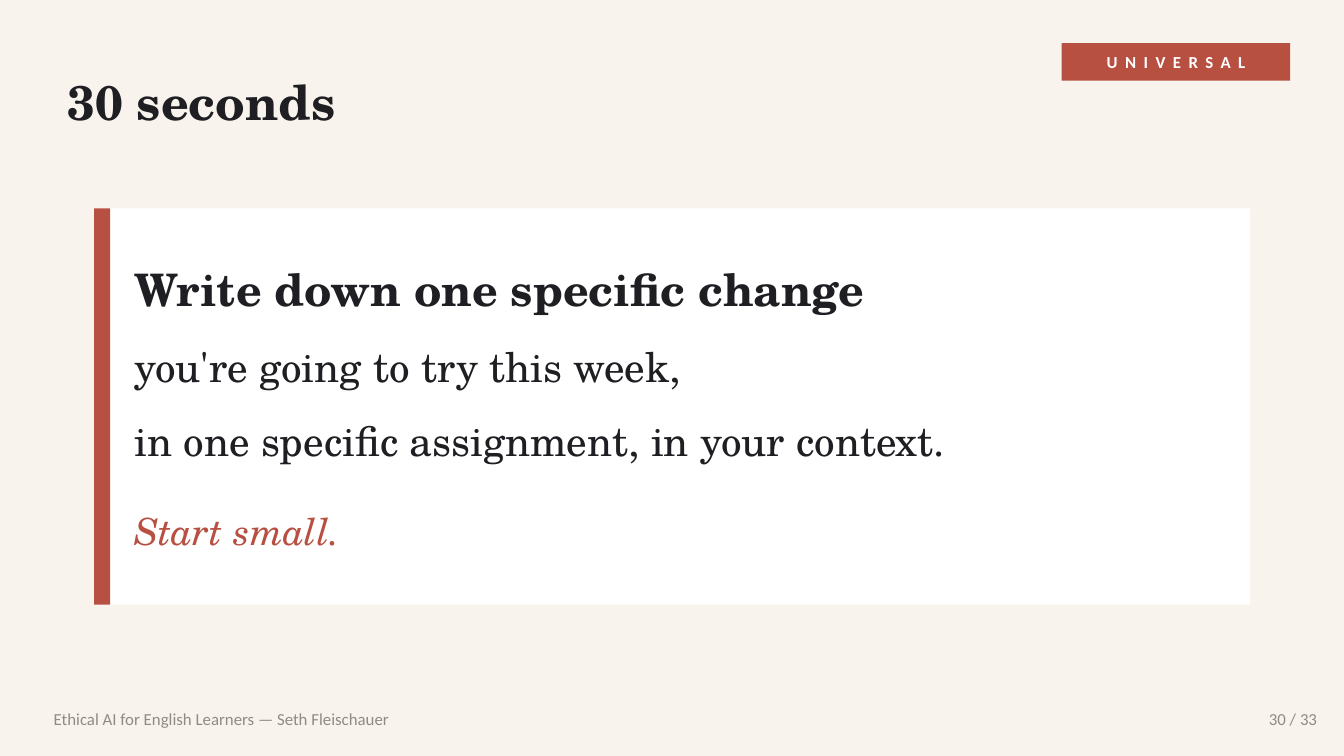
from pptx import Presentation
from pptx.dml.color import RGBColor
from pptx.enum import shapes, text
from pptx.util import Inches, Pt

SERIF, SANS = "TeX Gyre Schola", "Calibri"
INK, RUST, WHITE, GREY, CREAM = "1F1F23", "B85042", "FFFFFF", "8E8B86", "F8F4ED"
LEFT, CENTER, RIGHT = text.PP_ALIGN.LEFT, text.PP_ALIGN.CENTER, text.PP_ALIGN.RIGHT

# Widescreen slide, 16:9
presentation = Presentation()
presentation.slide_width = Inches(10)
presentation.slide_height = Inches(10 * 9 / 16)
slide = presentation.slides.add_slide(presentation.slide_layouts[5])
slide.background.fill.solid()
slide.background.fill.fore_color.rgb = RGBColor.from_string(CREAM)


def add_rectangle(left, top, width, height, color):
    shape = slide.shapes.add_shape(
        shapes.MSO_SHAPE.RECTANGLE, Inches(left), Inches(top), Inches(width), Inches(height))
    shape.shadow.inherit = False
    shape.fill.solid()
    shape.fill.fore_color.rgb = RGBColor.from_string(color)
    shape.line.fill.background()
    return shape


def write(shape, words, size, font, color, bold=False, italic=False, align=LEFT):
    frame = shape.text_frame
    frame.word_wrap = True
    frame.auto_size = text.MSO_AUTO_SIZE.NONE
    frame.vertical_anchor = text.MSO_ANCHOR.MIDDLE
    frame.margin_left = frame.margin_top = frame.margin_right = frame.margin_bottom = 0
    paragraph = frame.paragraphs[0]
    paragraph.alignment = align
    run = paragraph.add_run()
    run.text = words
    run.font.name, run.font.size = font, Pt(size)
    run.font.bold, run.font.italic = bold, italic
    run.font.color.rgb = RGBColor.from_string(color)
    return run


# Title
title = slide.shapes.title
title.left, title.top, title.width, title.height = map(Inches, (0.5, 0.4, 6.7, 0.7))
write(title, "30 seconds", 26, SERIF, INK, bold=True)

# Tag with letter-spaced label
tag = add_rectangle(7.9, 0.32, 1.7, 0.28, RUST)
label = write(tag, "UNIVERSAL", 9, SANS, WHITE, bold=True, align=CENTER)
label.font._element.set("spc", "400")

# Card with accent bar
add_rectangle(0.7, 1.55, 8.6, 2.95, WHITE)
add_rectangle(0.7, 1.55, 0.12, 2.95, RUST)

# Card lines: top, height, words, size, color, bold, italic
card_lines = [
    (1.85, 0.6, "Write down one specific change", 24, INK, True, False),
    (2.45, 0.55, "you're going to try this week,", 22, INK, False, False),
    (3, 0.55, "in one specific assignment, in your context.", 22, INK, False, False),
    (3.7, 0.5, "Start small.", 20, RUST, False, True),
]
for top, height, words, size, color, bold, italic in card_lines:
    box = slide.shapes.add_textbox(Inches(1), Inches(top), Inches(8), Inches(height))
    write(box, words, size, SERIF, color, bold, italic)

# Footer
for left, width, words, align in [
    (9, 0.8, "30 / 33", RIGHT),
    (0.4, 7, "Ethical AI for English Learners — Seth Fleischauer", LEFT),
]:
    box = slide.shapes.add_textbox(Inches(left), Inches(5.2), Inches(width), Inches(0.3))
    write(box, words, 9, SANS, GREY, align=align)

presentation.save("out.pptx")
